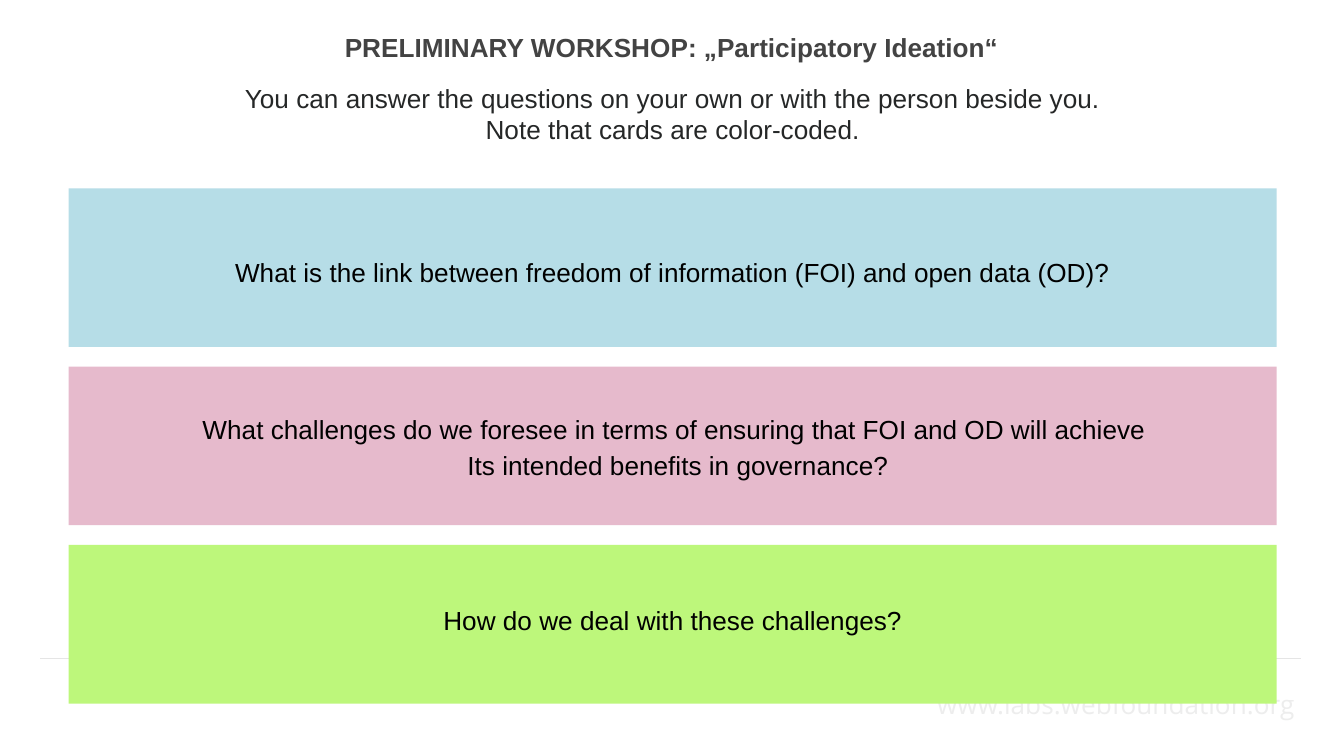
from pptx import Presentation
from pptx.dml.color import RGBColor as RGB
from pptx.enum.shapes import MSO_CONNECTOR as Conn, MSO_SHAPE as Shape
from pptx.enum.text import PP_ALIGN as Align
from pptx.oxml.ns import qn
from pptx.util import Cm, Pt
from lxml.etree import SubElement

# Content
TITLE = "PRELIMINARY WORKSHOP: „Participatory Ideation“"
INTRO = [
    "You can answer the questions on your own or with the person beside you.",
    "Note that cards are color-coded.",
]
# Fill, text box (left, top, width, height in cm), lines
CARDS = [
    ("blue", (3.61, 4.6, 18.21, 1.07),
     ["What is the link between freedom of information (FOI) and open data (OD)?"]),
    ("pink", (2.34, 7.57, 20.95, 1.57),
     ["What challenges do we foresee in terms of ensuring that FOI and OD will achieve ",
      "Its intended benefits in governance?"]),
    ("green", (3.61, 11.18, 18.21, 1.27),
     ["How do we deal with these challenges?"]),
]
SITE = "www.labs.webfoundation.org"

COLORS = {
    "blue": "B6DDE7", "pink": "E6BACC", "green": "BDF77B",
    "white": "FFFFFF", "rule": "808080", "site": "A5A6A5",
    "title": "434343", "intro": "252727", "black": "000000",
}
WIDE, HIGH = 25.4, 14.29
LEFT, TOP, CARD_W, CARD_H, STEP = 1.3, 3.56, 22.83, 3.0, 3.37

deck = Presentation()
deck.slide_width, deck.slide_height = Cm(WIDE), Cm(HIGH)
slide = deck.slides.add_slide(deck.slide_layouts[6])


def color(name):
    return RGB.from_string(COLORS[name])


def add_text(lines, box, hue="black", font="Arial", bold=False,
             align=Align.CENTER, pad=(0.25, 0.25), gap=0):
    frame = slide.shapes.add_textbox(*map(Cm, box)).text_frame
    frame.word_wrap = True
    frame.margin_left = frame.margin_right = Cm(pad[0])
    frame.margin_top = frame.margin_bottom = Cm(pad[1])
    for i, line in enumerate(lines):
        para = frame.add_paragraph() if i else frame.paragraphs[0]
        para.alignment = align
        if i:
            para.space_before = Pt(gap)
        run = para.add_run()
        run.text = line
        run.font.name, run.font.size, run.font.bold = font, Pt(14), bold
        run.font.color.rgb = color(hue)


def add_rect(box, hue):
    rect = slide.shapes.add_shape(Shape.RECTANGLE, *map(Cm, box))
    rect.shadow.inherit = False
    rect.fill.solid()
    rect.fill.fore_color.rgb = color(hue)
    rect.line.fill.background()
    return rect


# Footer: address and rule, faded by a translucent veil
add_text([SITE], (17.58, 12.88, 8.33, 0.91), hue="site", font="Open Sans",
         align=Align.LEFT, pad=(0.13, 0.13))
rule = slide.shapes.add_connector(Conn.STRAIGHT, Cm(0.76), Cm(12.45), Cm(24.59), Cm(12.45))
rule.line.color.rgb = color("rule")
rule.line.width = Pt(0.75)
SubElement(rule.element.spPr, qn("a:effectLst"))
veil = add_rect((0, 11.28, WIDE, HIGH - 11.28), "white")
tint = veil.element.spPr.find(".//" + qn("a:srgbClr"))
SubElement(tint, qn("a:alpha")).set("val", "80000")

# Heading
add_text(INTRO, (3.61, 1.42, 18.21, 1.45), hue="intro", pad=(0.25, 0.13))
add_text([TITLE], (0.58, 0.46, 24.23, 0.86), hue="title", bold=True, pad=(0.13, 0.13))

# Question cards
for i, (hue, box, lines) in enumerate(CARDS):
    add_rect((LEFT, TOP + i * STEP, CARD_W, CARD_H), hue)
    add_text(lines, box, gap=2.5)

deck.save("out.pptx")
